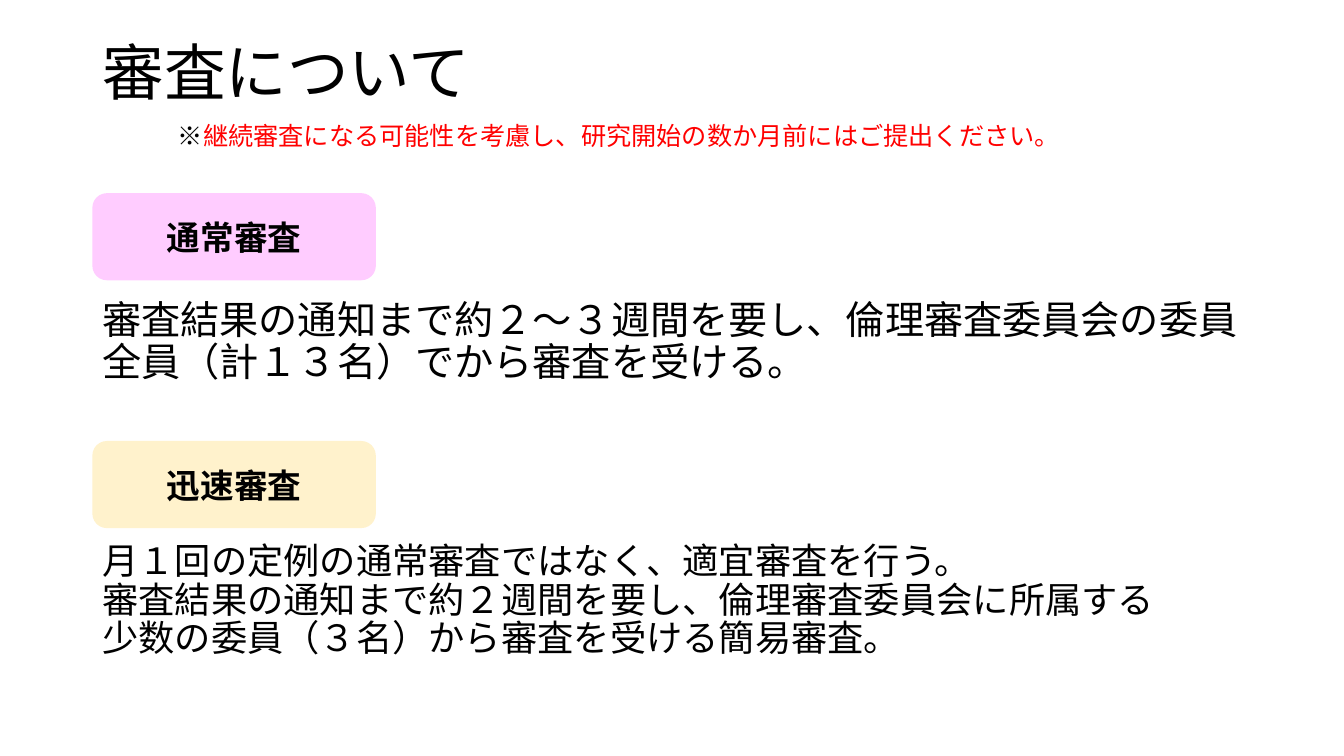
"""Build a slide that explains the regular and the expedited review."""
from lxml.etree import SubElement
from pptx import Presentation
from pptx.dml.color import RGBColor
from pptx.enum.shapes import MSO_SHAPE
from pptx.enum.text import MSO_ANCHOR as Anchor, PP_ALIGN as Align
from pptx.oxml.ns import qn
from pptx.util import Pt

PX = 9525
FONT = "Noto Sans CJK JP"
COLORS = {"ink": "000000", "alert": "FF0000", "regular": "FFCCFF", "expedited": "FFF2CC"}
LEFT, WIDTH = 88, 1104
BADGE_WIDTH, BADGE_HEIGHT = 270, 83

TITLE = "審査について"
NOTE = [("※", "ink"), ("継続審査になる可能性を考慮し、研究開始の数か月前にはご提出ください。", "alert")]
REVIEWS = [
    {
        "name": "通常審査", "color": "regular", "badge_top": 184,
        "top": 285, "height": 104, "size": 28,
        "spacing": {"line_spacing": 0.8, "space_before": Pt(3.3)},
        "lines": ["審査結果の通知まで約２～３週間を要し、倫理審査委員会の委員",
                  "全員（計１３名）でから審査を受ける。"],
    },
    {
        "name": "迅速審査", "color": "expedited", "badge_top": 420,
        "top": 519, "height": 132, "size": 25.9,
        "spacing": {"line_spacing": 0.7, "space_before": Pt(5.9)},
        "lines": ["月１回の定例の通常審査ではなく、適宜審査を行う。",
                  "審査結果の通知まで約２週間を要し、倫理審査委員会に所属する",
                  "少数の委員（３名）から審査を受ける簡易審査。"],
    },
]


def apply(target, values):
    for key, value in values.items():
        setattr(target, key, value)


def box(left, top, width, height):
    return [length * PX for length in (left, top, width, height)]


def write(frame, lines, size, bold=False, wrap=True, anchor=Anchor.TOP, **layout):
    apply(frame, {"word_wrap": wrap, "vertical_anchor": anchor})
    for index, line in enumerate(lines):
        paragraph = frame.add_paragraph() if index else frame.paragraphs[0]
        apply(paragraph, layout)
        for text, color in line:
            run = paragraph.add_run()
            run.text = text
            apply(run.font, {"size": Pt(size), "bold": bold, "name": FONT})
            run.font.color.rgb = RGBColor.from_string(COLORS[color])
            SubElement(run.font._element, qn("a:ea"), typeface=FONT)


def add_review(shapes, review):
    badge = shapes.add_shape(MSO_SHAPE.ROUNDED_RECTANGLE,
                             *box(LEFT, review["badge_top"], BADGE_WIDTH, BADGE_HEIGHT))
    badge.shadow.inherit = False
    badge.fill.solid()
    badge.fill.fore_color.rgb = RGBColor.from_string(COLORS[review["color"]])
    badge.line.fill.background()
    write(badge.text_frame, [[(review["name"], "ink")]], 24, bold=True,
          anchor=Anchor.MIDDLE, alignment=Align.CENTER)
    details = shapes.add_textbox(*box(LEFT, review["top"], WIDTH, review["height"]))
    write(details.text_frame, [[(line, "ink")] for line in review["lines"]],
          review["size"], **review["spacing"])


def main():
    deck = Presentation()
    apply(deck, {"slide_width": 1280 * PX, "slide_height": 720 * PX})
    shapes = deck.slides.add_slide(deck.slide_layouts[5]).shapes
    title = shapes.title
    apply(title, dict(zip(("left", "top", "width", "height"), box(LEFT, 2, WIDTH, 139))))
    write(title.text_frame, [[(TITLE, "ink")]], 44, anchor=Anchor.MIDDLE,
          alignment=Align.LEFT, line_spacing=0.9)
    for review in REVIEWS:
        add_review(shapes, review)
    note = shapes.add_textbox(*box(160, 110, 892, 38))
    write(note.text_frame, [NOTE], 18, wrap=False)
    deck.save("out.pptx")


if __name__ == "__main__":
    main()
